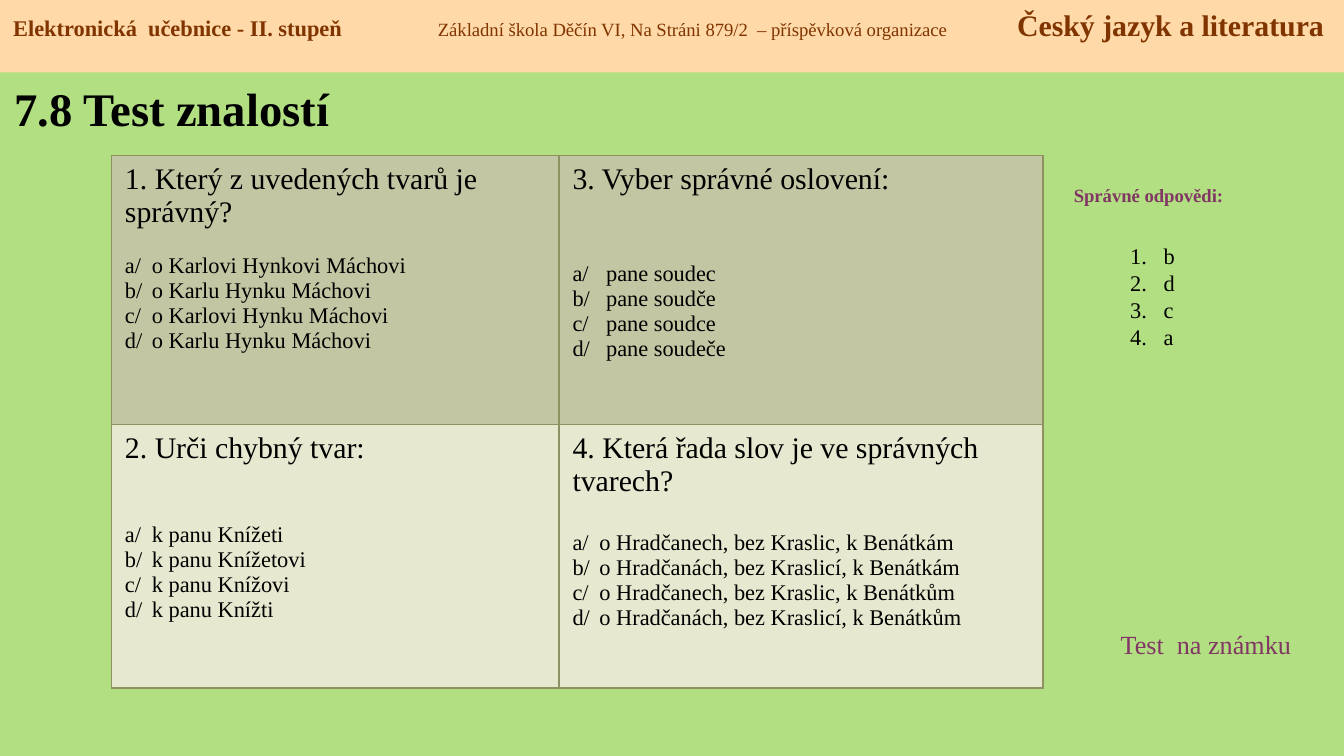
from pptx import Presentation
from pptx.dml.color import RGBColor
from pptx.enum.shapes import MSO_SHAPE
from pptx.enum.text import MSO_ANCHOR, PP_ALIGN
from pptx.oxml.ns import qn
from pptx.util import Inches, Pt
from lxml.etree import SubElement

FONT = "Times New Roman"
BLACK, BROWN, PLUM = "000000", "803400", "813763"
GREEN, PEACH, EDGE = "B2DF82", "FFD9A7", "8E9262"

# Content
TITLE = "7.8 Test znalostí"
HEADER = [  # text, size, bold
    ("Elektronická  učebnice - II. stupeň", 12, True),
    ("Základní škola Děčín VI, Na Stráni 879/2  – příspěvková organizace", 10, False),
    ("Český jazyk a literatura", 16, True),
]
STOPS = [3.16, 7.47]
KEY = ["b", "d", "c", "a"]
QUIZ = [  # rows of (question, gap before options, option indent, options)
    [("1. Který z uvedených tvarů je správný?", 13.4, 0.2,
      ["o Karlovi Hynkovi Máchovi", "o Karlu Hynku Máchovi",
       "o Karlovi Hynku Máchovi", "o Karlu Hynku Máchovi"]),
     ("3. Vyber správné oslovení:", 35.4, 0.25,
      ["pane soudec", "pane soudče", "pane soudce", "pane soudeče"])],
    [("2. Urči chybný tvar:", 31.2, 0.2,
      ["k panu Knížeti", "k panu Knížetovi", "k panu Knížovi", "k panu Knížti"]),
     ("4. Která řada slov je ve správných tvarech?", 17.7, 0.2,
      ["o Hradčanech, bez Kraslic, k Benátkám",
       "o Hradčanách, bez Kraslicí, k Benátkám",
       "o Hradčanech, bez Kraslic, k Benátkům",
       "o Hradčanách, bez Kraslicí, k Benátkům"])],
]
COLS, ROWS = [3.33, 3.6], [2.0, 1.96]
FILLS = ["C3C6A3", "E6E8CF"]


def color(code):
    return RGBColor.from_string(code)


def paint(fill, code):
    fill.solid()
    fill.fore_color.rgb = color(code)


def style(font, size, code=BLACK, bold=False):
    form = {"name": FONT, "size": Pt(size), "bold": bold}
    for name, value in form.items():
        setattr(font, name, value)
    font.color.rgb = color(code)


def write(para, text, size, code=BLACK, bold=False):
    run = para.add_run()
    run.text = text
    style(run.font, size, code, bold)


def hang(para, width):
    props = para._p.get_or_add_pPr()
    props.set("marL", str(Inches(width)))
    props.set("indent", str(-Inches(width)))
    return props


def add_tabs(para, stops):
    tabs = SubElement(para._p.get_or_add_pPr(), qn("a:tabLst"))
    for stop in stops:
        SubElement(tabs, qn("a:tab"), pos=str(Inches(stop)), algn="l")


def add_box(x, y, w, h):
    frame = slide.shapes.add_textbox(*map(Inches, (x, y, w, h))).text_frame
    frame.word_wrap = True
    return frame


def add_edges(cell):
    props = cell._tc.get_or_add_tcPr()
    for spot, side in enumerate(("lnL", "lnR", "lnT", "lnB")):
        line = SubElement(props, qn("a:" + side), w=str(Pt(0.75)))
        props.insert(spot, line)
        fill = SubElement(line, qn("a:solidFill"))
        SubElement(fill, qn("a:srgbClr"), val=EDGE)


def fill_cell(cell, quiz, code):
    ask, gap, width, picks = quiz
    paint(cell.fill, code)
    add_edges(cell)
    frame = cell.text_frame
    write(frame.paragraphs[0], ask, 16)
    for spot, (mark, pick) in enumerate(zip("abcd", picks)):
        para = frame.add_paragraph()
        hang(para, width)
        if spot == 0:
            para.space_before = Pt(gap)
        add_tabs(para, [width])
        write(para, f"{mark}/\t{pick}", 12)


deck = Presentation()
deck.slide_width = Inches(10)
deck.slide_height = deck.slide_width * 9 // 16
slide = deck.slides.add_slide(deck.slide_layouts[6])
paint(slide.background.fill, GREEN)

# Title
frame = add_box(0.01, 0.5, 3.19, 0.6)
frame.vertical_anchor = MSO_ANCHOR.MIDDLE
write(frame.paragraphs[0], TITLE, 25, bold=True)

# Question table
table = slide.shapes.add_table(2, 2, Inches(0.83), Inches(1.16),
                               Inches(sum(COLS)), Inches(sum(ROWS))).table
for col, width in zip(table.columns, COLS):
    col.width = Inches(width)
for row, height, line, code in zip(table.rows, ROWS, QUIZ, FILLS):
    row.height = Inches(height)
    for cell, quiz in zip(row.cells, line):
        fill_cell(cell, quiz, code)

# Answer key
para = add_box(7.76, 1.32, 1.57, 0.27).paragraphs[0]
para.alignment = PP_ALIGN.CENTER
write(para, "Správné odpovědi:", 10, PLUM, True)
frame = add_box(8.31, 1.75, 0.55, 0.9)
for spot, key in enumerate(KEY):
    para = frame.add_paragraph() if spot else frame.paragraphs[0]
    props = hang(para, 0.25)
    para.line_spacing = Pt(14.5)
    SubElement(props, qn("a:buFont"), typeface="+mj-lt")
    SubElement(props, qn("a:buAutoNum"), type="arabicPeriod")
    write(para, key, 12)

# Graded test label
write(add_box(8.24, 4.63, 1.57, 0.34).paragraphs[0], "Test  na známku", 14, PLUM)

# Header band
band = slide.shapes.add_shape(MSO_SHAPE.RECTANGLE, 0, 0, Inches(10), Inches(0.54))
band.shadow.inherit = False
paint(band.fill, PEACH)
band.line.fill.background()
frame = band.text_frame
frame.vertical_anchor = MSO_ANCHOR.TOP
frame.margin_top = Inches(0.05)
frame.margin_right = 0
para = frame.paragraphs[0]
para.alignment = PP_ALIGN.LEFT
add_tabs(para, STOPS)
for spot, (text, size, bold) in enumerate(HEADER):
    write(para, "\t" + text if spot else text, size, BROWN, bold)

deck.save("out.pptx")
